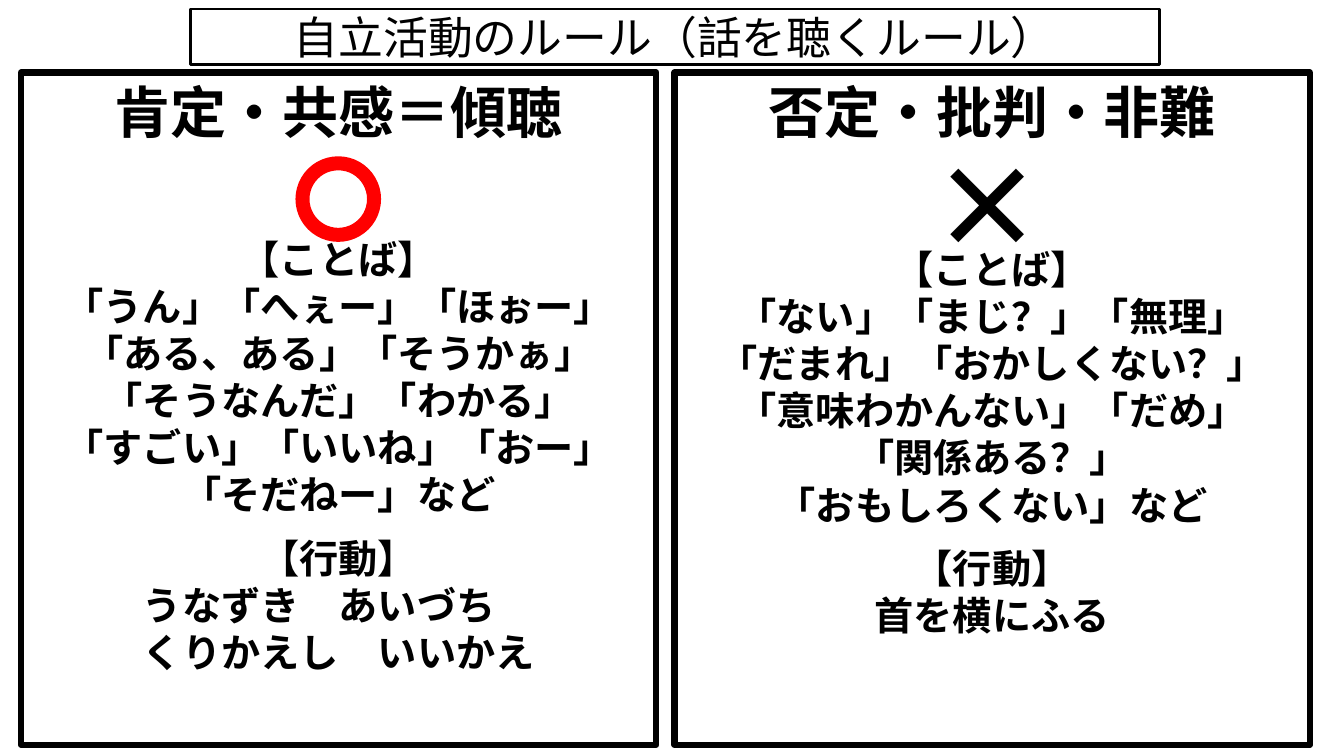
import pptx
import pptx.util
import pptx.dml.color
import pptx.enum.shapes
import pptx.enum.text
import pptx.oxml
import pptx.oxml.ns

SLIDE_WIDTH, SLIDE_HEIGHT = 13.33, 7.5
FONT = "Noto Sans CJK JP"
BLACK, WHITE, RED = "000000", "FFFFFF", "FF0000"
HEADING = "自立活動のルール（話を聴くルール）"
RULES = [
    {
        "title": "肯定・共感＝傾聴",
        "mark_gap": 64.8,
        "words": [
            "「うん」「へぇー」「ほぉー」「ある、ある」「そうかぁ」",
            "「そうなんだ」「わかる」",
            "「すごい」「いいね」「おー」",
            "「そだねー」など",
        ],
        "actions": ["うなずき　あいづち　", "くりかえし　いいかえ"],
    },
    {
        "title": "否定・批判・非難",
        "mark_gap": 72,
        "words": [
            "「ない」「まじ？」「無理」",
            "「だまれ」「おかしくない？」",
            "「意味わかんない」「だめ」",
            "「関係ある？」",
            "「おもしろくない」など",
        ],
        "actions": ["首を横にふる"],
    },
]
ACTION_GAP = 12
PANEL_LEFT, PANEL_TOP, PANEL_WIDTH, PANEL_HEIGHT = 0.21, 0.72, 6.3, 6.67
PANEL_STEP = PANEL_WIDTH + 0.18


def color(hex_string):
    return pptx.dml.color.RGBColor.from_string(hex_string)


def inches(*lengths):
    return [pptx.util.Inches(length) for length in lengths]


def add_outline(slide, preset, box, line, width, fill=None):
    outline = slide.shapes.add_shape(preset, *inches(*box))
    outline.shadow.inherit = False
    if fill:
        outline.fill.solid()
        outline.fill.fore_color.rgb = color(fill)
    else:
        outline.fill.background()
    outline.line.color.rgb = color(line)
    outline.line.width = pptx.util.Pt(width)
    return outline


def write_lines(frame, lines, bold, align):
    frame.word_wrap = True
    for index, (wording, size, gap) in enumerate(lines):
        paragraph = frame.add_paragraph() if index else frame.paragraphs[0]
        paragraph.text = wording
        paragraph.alignment = align
        paragraph.space_before = pptx.util.Pt(gap)
        font = paragraph.font
        font.size = pptx.util.Pt(size)
        font.bold = bold
        font.color.rgb = color(BLACK)
        font.name = FONT
        east_asian = pptx.oxml.parse_xml(
            f'<a:ea {pptx.oxml.ns.nsdecls("a")} typeface="{FONT}"/>')
        paragraph.font._element.append(east_asian)


def panel_lines(rule):
    return [
        (rule["title"], 40, 0),
        ("【ことば】", 28, rule["mark_gap"]),
        *((wording, 28, 0) for wording in rule["words"]),
        ("【行動】", 28, ACTION_GAP),
        *((wording, 28, 0) for wording in rule["actions"]),
    ]


def main():
    """Build the slide of listening rules."""
    deck = pptx.Presentation()
    deck.slide_width, deck.slide_height = inches(SLIDE_WIDTH, SLIDE_HEIGHT)
    slide = deck.slides.add_slide(deck.slide_layouts[6])
    presets = pptx.enum.shapes.MSO_SHAPE
    aligns = pptx.enum.text.PP_ALIGN
    anchors = pptx.enum.text.MSO_ANCHOR

    heading = add_outline(slide, presets.RECTANGLE, (1.89, 0.09, 9.61, 0.55), BLACK, 2)
    heading.text_frame.vertical_anchor = anchors.MIDDLE
    write_lines(heading.text_frame, [(HEADING, 32, 0)], False, aligns.CENTER)

    for column, rule in enumerate(RULES):
        box = (PANEL_LEFT + column * PANEL_STEP, PANEL_TOP, PANEL_WIDTH, PANEL_HEIGHT)
        panel = add_outline(slide, presets.RECTANGLE, box, BLACK, 4.5, WHITE)
        panel.text_frame.vertical_anchor = anchors.TOP
        write_lines(panel.text_frame, panel_lines(rule), True, aligns.CENTER)

    add_outline(slide, presets.OVAL, (3, 1.62, 0.71, 0.71), RED, 10, WHITE)
    cross = slide.shapes.add_textbox(*inches(9.14, 1.3, 1.38, 1.45))
    cross.text_frame.vertical_anchor = anchors.MIDDLE
    write_lines(cross.text_frame, [("×", 80, 0)], True, aligns.LEFT)

    deck.save("out.pptx")


if __name__ == "__main__":
    main()
